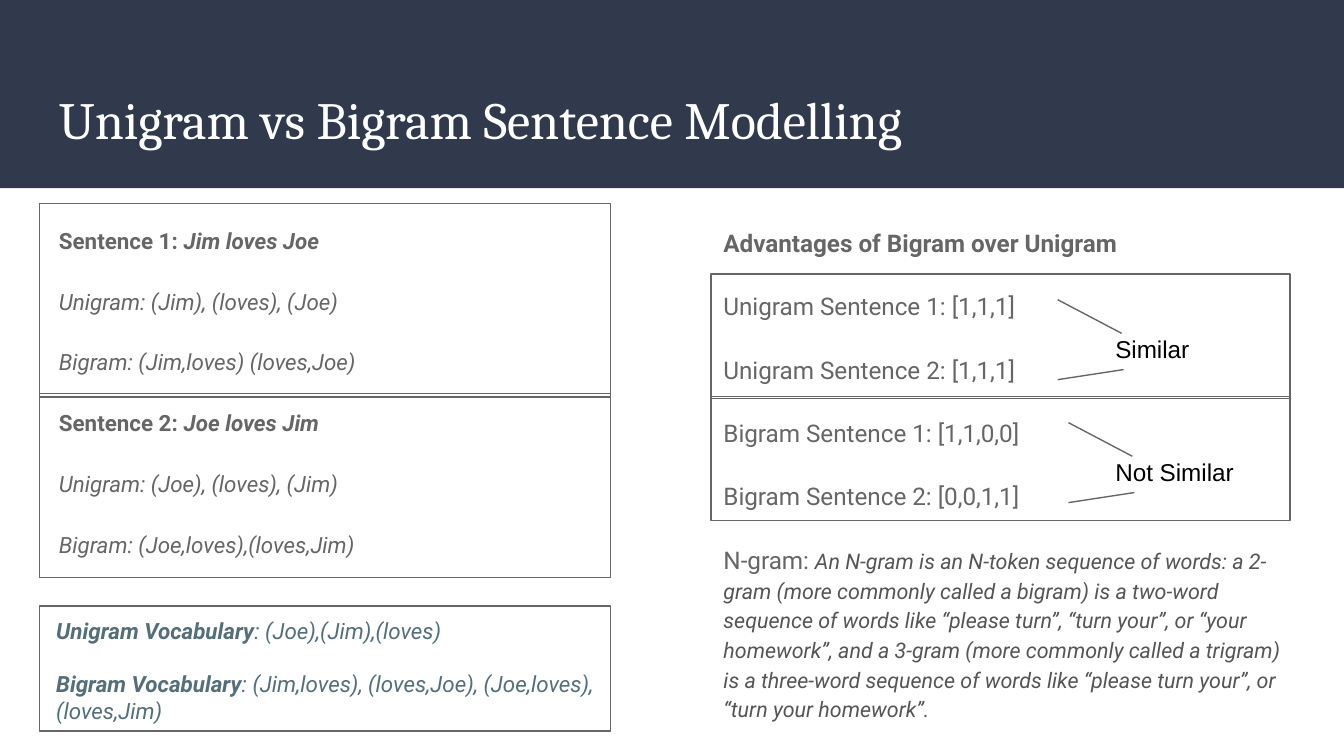
from pptx import Presentation
from pptx.dml.color import RGBColor
from pptx.enum.shapes import MSO_CONNECTOR as Connector, MSO_SHAPE as Shape
from pptx.enum.text import MSO_ANCHOR as Anchor
from pptx.oxml.ns import qn
from pptx.util import Inches, Pt

GREY, NAVY, TEAL, WHITE, BLACK = "666666", "31394D", "546E7A", "FFFFFF", "000000"
BOLD, ITALIC = {"bold": True}, {"italic": True}
BOTH = BOLD | ITALIC


def colour(value):
    return RGBColor.from_string(value)


class Page:
    """Draws styled elements on one slide, measured in a 100-column grid of square cells."""

    cell = 0.1
    inset = 1

    def __init__(self, deck):
        self.page = deck.slides.add_slide(deck.slide_layouts[6])

    def grid(self, *cells):
        return [Inches(cell * self.cell) for cell in cells]

    def box(self, left, top, width, height, fill=None):
        box = self.page.shapes.add_shape(Shape.RECTANGLE, *self.grid(left, top, width, height))
        box.shadow.inherit = False
        if fill:
            box.fill.solid()
            box.fill.fore_color.rgb = colour(fill)
            box.line.fill.background()
        else:
            box.fill.background()
            self.outline(box)

    def outline(self, item):
        item.line.color.rgb = colour(GREY)
        item.line.width = Pt(0.75)

    def line(self, start, end):
        line = self.page.shapes.add_connector(Connector.STRAIGHT, *self.grid(*start, *end))
        properties = line._element.spPr
        self.outline(line)
        properties.append(properties.makeelement(qn("a:effectLst"), {}))

    def text(self, place, paras, size, ink=GREY, font="Roboto", spacing=1.0, gap=0, anchor=Anchor.TOP):
        frame = self.page.shapes.add_textbox(*self.grid(*place)).text_frame
        inset, = self.grid(self.inset)
        sides = dict.fromkeys(("margin_left", "margin_top", "margin_right", "margin_bottom"), inset)
        for name, value in (sides | {"word_wrap": True, "vertical_anchor": anchor}).items():
            setattr(frame, name, value)
        for index, spans in enumerate(paras):
            para = frame.add_paragraph() if index else frame.paragraphs[0]
            para.line_spacing = spacing
            para.space_before = Pt(gap if index else 0)
            for words, changes in spans:
                span = para.add_run()
                span.text = words
                values = {"name": font, "size": Pt(size), "ink": ink} | changes
                span.font.color.rgb = colour(values.pop("ink"))
                for name, value in values.items():
                    setattr(span.font, name, value)

    def verdict(self, left, top, words):
        """Join two rows of a box to their shared verdict."""
        self.line((left, top), (left + 4.75, top + 2.5))
        self.line((left, top + 5.95), (left + 4.9, top + 5.2))
        self.text((82, top + 1.85, 12.9, 1.7), [[(words, {})]], 13, BLACK, "Arial")


def sentence(number, words, unigrams, bigrams):
    return [
        [(f"Sentence {number}: ", BOLD), (words, BOTH)],
        [(f"Unigram: {unigrams}", ITALIC)],
        [(f"Bigram: {bigrams}", ITALIC)],
    ]


def main():
    deck = Presentation()
    deck.slide_width = Inches(10)
    deck.slide_height = deck.slide_width * 9 // 16
    page = Page(deck)

    page.box(0, 0, 100, 14, NAVY)
    page.text((3.4, 5.45, 93.2, 6.8), [[("Unigram vs Bigram Sentence Modelling", {})]],
              28, WHITE, "Cambria", anchor=Anchor.MIDDLE)

    sentences = (
        sentence(1, "Jim loves Joe", "(Jim), (loves), (Joe)", "(Jim,loves) (loves,Joe)")
        + sentence(2, "Joe loves Jim", "(Joe), (loves), (Jim)", "(Joe,loves),(loves,Jim)")
    )
    page.text((3.4, 15.6, 43.7, 33.6), sentences, 12, spacing=1.15, gap=16)

    vectors = {
        "Unigram Sentence 1": "[1,1,1]",
        "Unigram Sentence 2": "[1,1,1]",
        "Bigram Sentence 1": "[1,1,0,0]",
        "Bigram Sentence 2": "[0,0,1,1]",
    }
    definition = (
        "An N-gram is an N-token sequence of words: a 2-gram (more commonly called a bigram) "
        "is a two-word sequence of words like “please turn”, “turn your”, or “your homework”, "
        "and a 3-gram (more commonly called a trigram) is a three-word sequence of words like "
        "“please turn your”, or “turn your homework”."
    )
    advantages = [
        [("Advantages of Bigram over Unigram", BOLD)],
        *([(f"{name}: {vector}", {})] for name, vector in vectors.items()),
        [("N-gram: ", {}), (definition, ITALIC | {"size": Pt(11.5), "ink": "555555"})],
    ]
    page.text((52.85, 15.65, 43.7, 39.8), advantages, 13, spacing=1.15, gap=16)

    page.verdict(78.7, 22.3, "Similar")
    page.verdict(79.5, 31.45, "Not Similar")

    for top in (20.4, 29.5):
        page.box(52.9, top, 43.1, 9.25)
    for top, height in ((29.3, 13.7), (15.15, 14.4), (45.1, 9.3)):
        page.box(2.95, top, 42.5, height)

    vocabulary = [
        [("Unigram Vocabulary", BOTH), (": (Joe),(Jim),(loves)", ITALIC)],
        [("Bigram Vocabulary", BOTH),
         (": (Jim,loves), (loves,Joe), (Joe,loves), (loves,Jim)", ITALIC)],
    ]
    page.text((3.2, 44.9, 42.3, 6.8), vocabulary, 12, TEAL, gap=14)

    deck.save("out.pptx")


if __name__ == "__main__":
    main()
